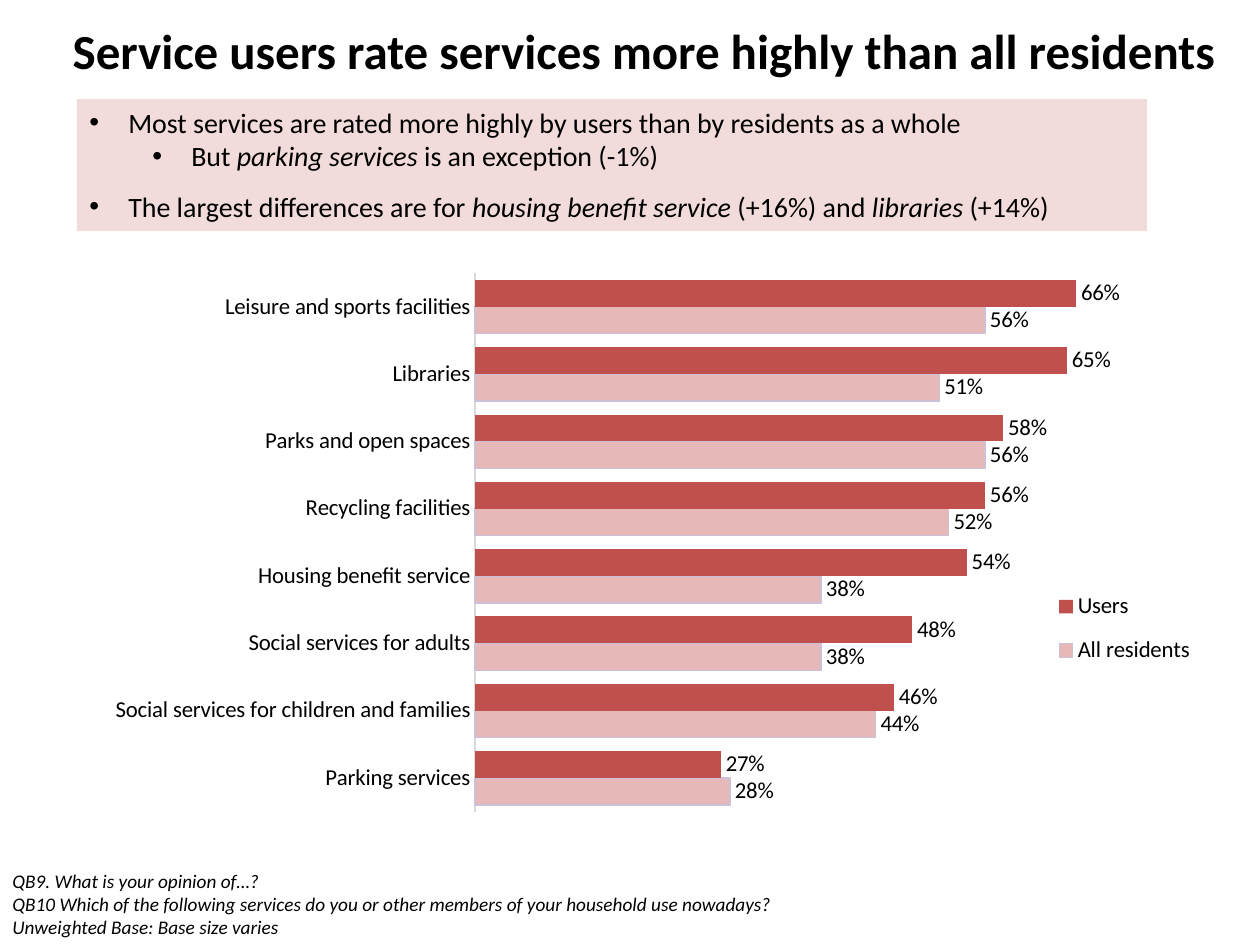
from dataclasses import dataclass

from lxml import etree
from pptx import Presentation
from pptx import util as u
from pptx.chart.data import CategoryChartData
from pptx.dml.color import RGBColor
from pptx.enum import chart as ch, shapes, text
from pptx.oxml import parse_xml
from pptx.oxml.ns import nsdecls, qn

EMU_PER_PX = 914400 / 126
FONT = "Calibri"
COLORS = {
    "text": "000000",
    "panel": "F2DCDB",
    "users": "C0504D",
    "residents": "E6B9B8",
    "residents_line": "CCC1DA",
    "axis": "D9D9D9",
}


@dataclass
class Bullet:
    text: str
    indent: int = 39
    space_before: float = 0


@dataclass
class Rating:
    service: str
    users: float
    residents: float


@dataclass
class SeriesStyle:
    fill: str
    line: str | None = None


BULLETS = [
    Bullet("Most services are rated more highly by users than by residents as a whole"),
    Bullet("But *parking services* is an exception (-1%)", indent=102),
    Bullet("The largest differences are for *housing benefit service* (+16%) "
           "and *libraries* (+14%)", space_before=9.8),
]
NOTES = [
    "QB9. What is your opinion of…?",
    "QB10 Which of the following services do you or other members of your household use nowadays?",
    "Unweighted Base: Base size varies",
]
RATINGS = [
    Rating("Parking services", 0.27, 0.28),
    Rating("Social services for children and families", 0.46, 0.44),
    Rating("Social services for adults", 0.48, 0.38),
    Rating("Housing benefit service", 0.54, 0.38),
    Rating("Recycling facilities", 0.56, 0.52),
    Rating("Parks and open spaces", 0.58, 0.56),
    Rating("Libraries", 0.65, 0.51),
    Rating("Leisure and sports facilities", 0.66, 0.56),
]
STYLES = [SeriesStyle("residents", "residents_line"), SeriesStyle("users")]


def px(n: int) -> int:
    return round(n * EMU_PER_PX)


def rgb(name: str) -> RGBColor:
    return RGBColor.from_string(COLORS[name])


def set_font(font, size: float, bold: bool = False, italic: bool = False, name: str = FONT) -> None:
    font.name, font.size = name, u.Pt(size)
    font.bold, font.italic = bold, italic
    font.color.rgb = rgb("text")


def add_text(p, content: str, *, size: float, bold: bool = False, italic: bool = False,
             space_before: float = 0) -> None:
    """Fill a paragraph; parts between asterisks switch to italic."""
    p.alignment = text.PP_ALIGN.LEFT
    p.space_before = u.Pt(space_before)
    for i, part in enumerate(content.split("*")):
        r = p.add_run()
        r.text = part
        set_font(r.font, size, bold, italic or i % 2 == 1)


def set_bullet(p, indent: int) -> None:
    pPr = p._p.get_or_add_pPr()
    pPr.set("marL", str(px(indent)))
    pPr.set("indent", str(-px(39)))
    etree.SubElement(pPr, qn("a:buFont"), typeface="Arial")
    etree.SubElement(pPr, qn("a:buChar"), char="•")


def paragraphs(tf, count: int) -> list:
    return [tf.paragraphs[0]] + [tf.add_paragraph() for _ in range(count - 1)]


def add_title(s, content: str) -> None:
    sp = s.shapes.title
    sp.left, sp.top, sp.width, sp.height = map(px, (60, 14, 1189, 79))
    tf = sp.text_frame
    tf.auto_size = text.MSO_AUTO_SIZE.NONE
    tf.vertical_anchor = text.MSO_ANCHOR.TOP
    add_text(tf.paragraphs[0], content, size=28, bold=True)


def add_panel(s, bullets: list[Bullet]) -> None:
    sp = s.shapes.add_shape(shapes.MSO_SHAPE.RECTANGLE, *map(px, (77, 99, 1070, 132)))
    sp.shadow.inherit = False
    sp.fill.solid()
    sp.fill.fore_color.rgb = rgb("panel")
    sp.line.fill.background()
    tf = sp.text_frame
    tf.word_wrap = True
    tf.vertical_anchor = text.MSO_ANCHOR.TOP
    for p, b in zip(paragraphs(tf, len(bullets)), bullets):
        set_bullet(p, b.indent)
        add_text(p, b.text, size=16, space_before=b.space_before)


def add_notes(s, lines: list[str]) -> None:
    tf = s.shapes.add_textbox(*map(px, (0, 863, 905, 83))).text_frame
    tf.word_wrap = True
    for p, line in zip(paragraphs(tf, len(lines)), lines):
        add_text(p, line, size=11, italic=True)


def set_layout(element, x: float, y: float, w: float, h: float, inner: bool = False) -> None:
    """Place a chart part by fractions of the chart area."""
    for old in element.findall(qn("c:layout")):
        element.remove(old)
    target = '<c:layoutTarget val="inner"/>' if inner else ""
    layout = parse_xml(
        f'<c:layout {nsdecls("c")}><c:manualLayout>{target}'
        '<c:xMode val="edge"/><c:yMode val="edge"/>'
        f'<c:x val="{x}"/><c:y val="{y}"/><c:w val="{w}"/><c:h val="{h}"/>'
        '</c:manualLayout></c:layout>')
    element.insert(0 if inner else 1, layout)


def style_series(series, style: SeriesStyle) -> None:
    series.format.fill.solid()
    series.format.fill.fore_color.rgb = rgb(style.fill)
    if style.line:
        series.format.line.color.rgb = rgb(style.line)
        series.format.line.width = u.Pt(0.75)
    else:
        series.format.line.fill.background()
    labels = series.data_labels
    labels.show_value = True
    labels.number_format, labels.number_format_is_linked = "0%", False
    labels.position = ch.XL_LABEL_POSITION.OUTSIDE_END
    set_font(labels.font, 13)


def add_ratings_chart(s, ratings: list[Rating]) -> None:
    data = CategoryChartData(number_format="0%")
    data.categories = [r.service for r in ratings]
    data.add_series("All residents", [r.residents for r in ratings])
    data.add_series("Users", [r.users for r in ratings])
    chart = s.shapes.add_chart(ch.XL_CHART_TYPE.BAR_CLUSTERED,
                               *map(px, (38, 256, 1181, 573)), data).chart
    set_font(chart.font, 10, name="Arial")
    chart.has_title = False

    plot = chart.plots[0]
    plot.gap_width, plot.overlap = 50, 0
    plot.vary_by_categories = False
    for series, style in zip(plot.series, STYLES):
        style_series(series, style)

    cat = chart.category_axis
    cat.major_tick_mark = cat.minor_tick_mark = ch.XL_TICK_MARK.NONE
    cat.format.line.color.rgb = rgb("axis")
    cat.format.line.width = u.Pt(0.75)
    set_font(cat.tick_labels.font, 13)
    val = chart.value_axis
    val.minimum_scale, val.maximum_scale = 0, 0.7
    val.has_major_gridlines = False
    val.visible = False

    chart.has_legend = True
    legend = chart.legend
    legend.position = ch.XL_LEGEND_POSITION.RIGHT
    legend.include_in_layout = False
    set_font(legend.font, 13)
    set_layout(legend._element, 0.85, 0.56, 0.14, 0.18)
    set_layout(chart._chartSpace.chart.plotArea, 0.37, 0.03, 0.54, 0.94, inner=True)


def main() -> None:
    prs = Presentation()
    prs.slide_width, prs.slide_height = px(1260), px(945)
    s = prs.slides.add_slide(prs.slide_layouts[5])
    add_title(s, "Service users rate services more highly than all residents")
    add_notes(s, NOTES)
    add_panel(s, BULLETS)
    add_ratings_chart(s, RATINGS)
    prs.save("out.pptx")


if __name__ == "__main__":
    main()
